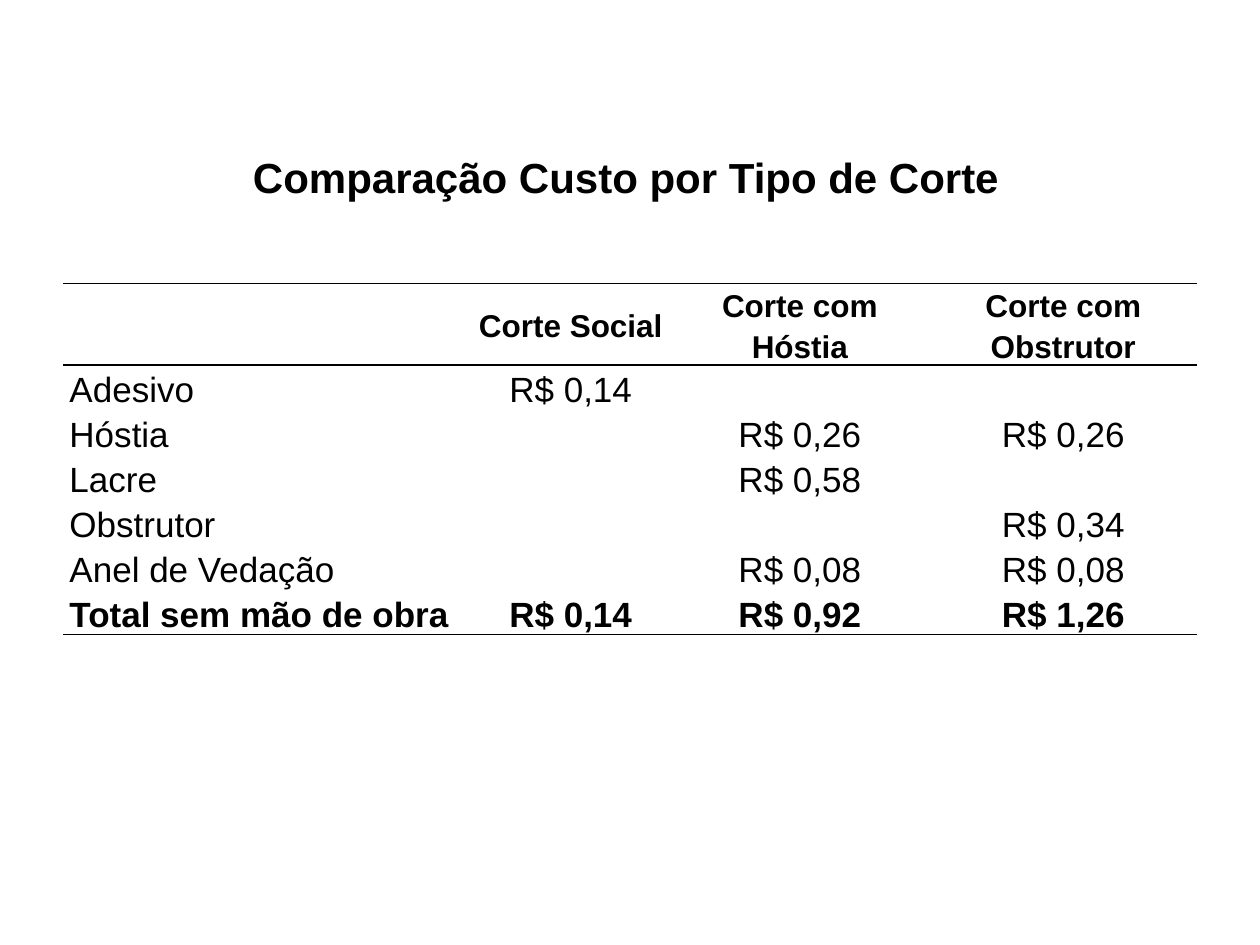
from lxml.etree import SubElement
from pptx import Presentation
from pptx.dml.color import RGBColor
from pptx.enum.text import MSO_ANCHOR, MSO_AUTO_SIZE, PP_ALIGN
from pptx.oxml.ns import qn
from pptx.util import Cm, Pt

COLORS = {"ink": "000000"}
FONT = "Arial"
TITLE = "Comparação Custo por Tipo de Corte"
ROWS = [
    ("", "Corte Social", "Corte com Hóstia", "Corte com Obstrutor"),
    ("Adesivo", "R$ 0,14", "", ""),
    ("Hóstia", "", "R$ 0,26", "R$ 0,26"),
    ("Lacre", "", "R$ 0,58", ""),
    ("Obstrutor", "", "", "R$ 0,34"),
    ("Anel de Vedação", "", "R$ 0,08", "R$ 0,08"),
    ("Total sem mão de obra", "R$ 0,14", "R$ 0,92", "R$ 1,26"),
]
COL_WIDTHS = [8.23, 4.01, 5.23, 5.39]
ROW_HEIGHTS = [1.63] + [0.9] * (len(ROWS) - 1)
RULED_EDGES = {0, 1, len(ROWS)}  # row boundaries that carry a line


def style_text(p, size, bold):
    for r in p.runs:
        r.font.name = FONT
        r.font.size = Pt(size)
        r.font.bold = bold
        r.font.color.rgb = RGBColor.from_string(COLORS["ink"])


def set_borders(cell, row):
    ruled = {"lnT": row in RULED_EDGES, "lnB": row + 1 in RULED_EDGES}
    tc_pr = cell._tc.get_or_add_tcPr()
    for tag in ("lnL", "lnR", "lnT", "lnB"):
        ln = SubElement(tc_pr, qn(f"a:{tag}"), w=str(Pt(1)))
        if ruled.get(tag):
            fill = SubElement(ln, qn("a:solidFill"))
            SubElement(fill, qn("a:srgbClr"), val=COLORS["ink"])
        else:
            SubElement(ln, qn("a:noFill"))


def fill_cell(cell, text, row, col):
    set_borders(cell, row)
    cell.fill.background()
    cell.vertical_anchor = MSO_ANCHOR.MIDDLE
    cell.margin_left = cell.margin_right = Cm(0.13)
    cell.margin_top = cell.margin_bottom = 0
    cell.text_frame.text = text
    p = cell.text_frame.paragraphs[0]
    p.line_spacing = 1.15
    p.alignment = PP_ALIGN.CENTER if col else PP_ALIGN.LEFT
    style_text(p, 20 if row else 18, row in (0, len(ROWS) - 1))


def add_cost_table(s):
    frame = s.shapes.add_table(len(ROWS), len(COL_WIDTHS), Cm(1.27), Cm(5.72),
                               Cm(sum(COL_WIDTHS)), Cm(sum(ROW_HEIGHTS)))
    table = frame.table
    table.first_row = table.horz_banding = False
    for column, width in zip(table.columns, COL_WIDTHS):
        column.width = Cm(width)
    for i, (height, texts) in enumerate(zip(ROW_HEIGHTS, ROWS)):
        table.rows[i].height = Cm(height)
        for j, text in enumerate(texts):
            fill_cell(table.cell(i, j), text, i, j)


def add_title(s):
    tf = s.shapes.add_textbox(Cm(4.85), Cm(2.92), Cm(15.7), Cm(1.27)).text_frame
    tf.word_wrap = False
    tf.auto_size = MSO_AUTO_SIZE.SHAPE_TO_FIT_TEXT
    tf.text = TITLE
    style_text(tf.paragraphs[0], 24, True)


def main():
    prs = Presentation()
    prs.slide_width, prs.slide_height = Cm(25.4), Cm(19.05)
    s = prs.slides.add_slide(prs.slide_layouts[6])
    add_cost_table(s)
    add_title(s)
    prs.save("out.pptx")


if __name__ == "__main__":
    main()
